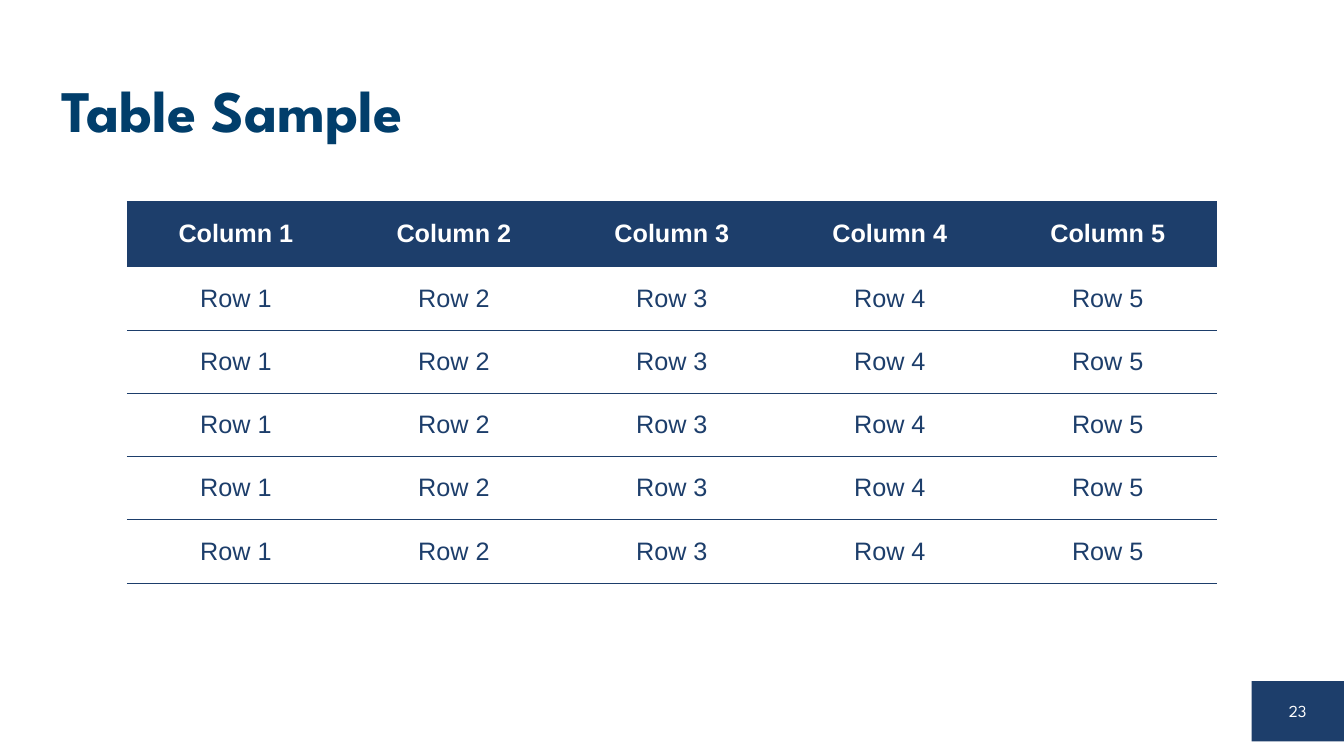
from pptx import Presentation
from pptx.dml.color import RGBColor
from pptx.enum.shapes import MSO_SHAPE
from pptx.enum.text import MSO_ANCHOR, PP_ALIGN
from pptx.oxml import parse_xml
from pptx.oxml.ns import nsdecls
from pptx.util import Pt

NAVY = RGBColor(0x1D, 0x3E, 0x6B)
BLUE = RGBColor(0x01, 0x3E, 0x6B)
WHITE = RGBColor(0xFF, 0xFF, 0xFF)
HEAD = "League Spartan"
BODY = "Arial"


def style(frame, face, size, color, bold, align):
    frame.vertical_anchor = MSO_ANCHOR.MIDDLE
    para = frame.paragraphs[0]
    para.alignment = align
    font = para.runs[0].font
    font.name = face
    font.size = Pt(size)
    font.bold = bold
    font.color.rgb = color


def border(cell, sides, paint):
    for side in reversed(sides):
        line = parse_xml(f'<a:ln{side} {nsdecls("a")} w="{Pt(0.5)}">{paint}</a:ln{side}>')
        cell._tc.get_or_add_tcPr().insert(0, line)


deck = Presentation()
deck.slide_width = Pt(960)
deck.slide_height = Pt(540)
slide = deck.slides.add_slide(deck.slide_layouts[5])

title = slide.shapes.title
title.left, title.top, title.width, title.height = Pt(36.7), Pt(28.8), Pt(887), Pt(104.4)
title.text_frame.text = "Table Sample"
title.text_frame.paragraphs[0].line_spacing = 0.9
style(title.text_frame, HEAD, 42, BLUE, True, PP_ALIGN.LEFT)

badge = slide.shapes.add_shape(MSO_SHAPE.RECTANGLE, Pt(894), Pt(486.5), Pt(66), Pt(43))
badge.shadow.inherit = False
badge.fill.solid()
badge.fill.fore_color.rgb = NAVY
badge.line.fill.background()
badge.text_frame.text = "23"
style(badge.text_frame, HEAD, 12, WHITE, False, PP_ALIGN.CENTER)

frame = slide.shapes.add_table(6, 5, Pt(90.7), Pt(144), Pt(778.5), Pt(272.5))
table = frame.table
table.horz_banding = False
for col in table.columns:
    col.width = Pt(155.7)
for num, row in enumerate(table.rows):
    top = num == 0
    row.height = Pt(46.5 if top else 45.2)
    for pos, cell in enumerate(row.cells, 1):
        cell.text_frame.text = f"{'Column' if top else 'Row'} {pos}"
        style(cell.text_frame, BODY, 18, WHITE if top else NAVY, top, PP_ALIGN.CENTER)
        cell.vertical_anchor = MSO_ANCHOR.MIDDLE
        cell.margin_left = cell.margin_right = Pt(5)
        cell.margin_top = cell.margin_bottom = Pt(3)
        if top:
            cell.fill.solid()
            cell.fill.fore_color.rgb = NAVY
        else:
            cell.fill.background()
        border(cell, "TB", f'<a:solidFill><a:srgbClr val="{NAVY}"/></a:solidFill>')
        border(cell, "LR", "<a:noFill/>")

deck.save("out.pptx")
